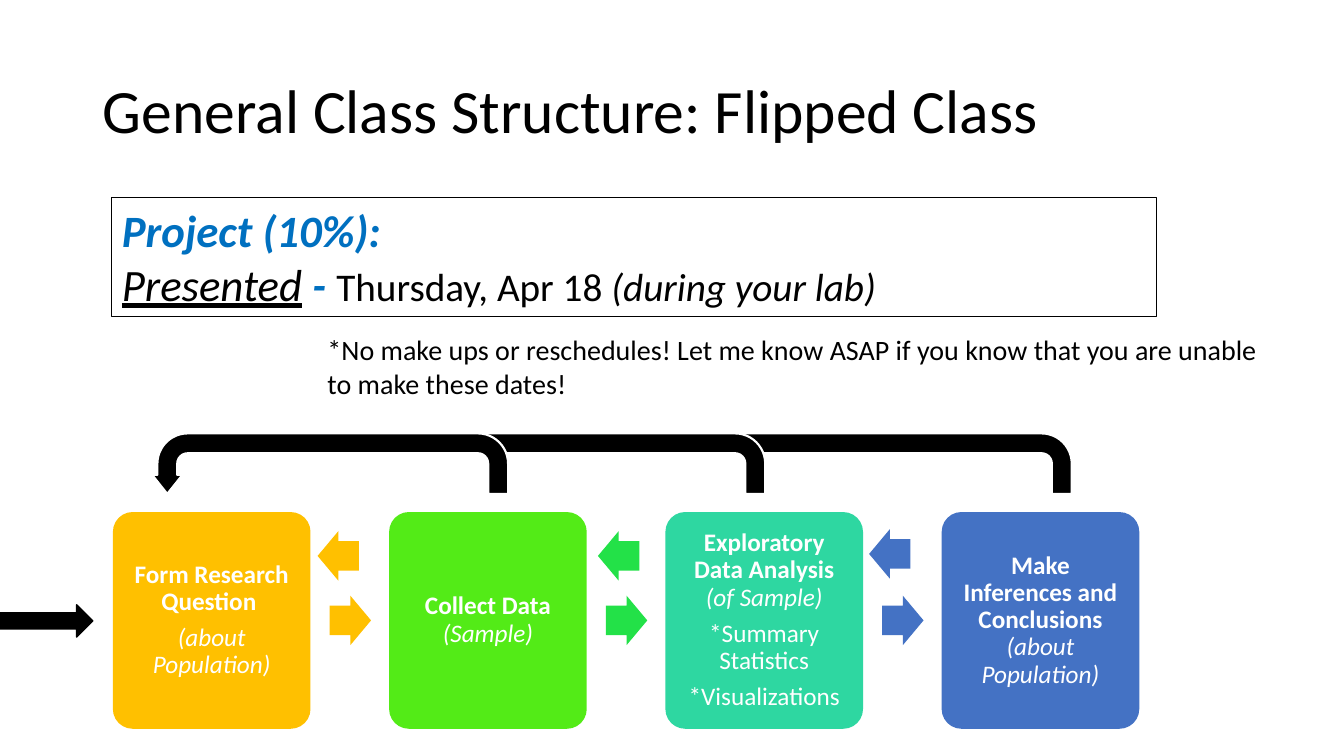
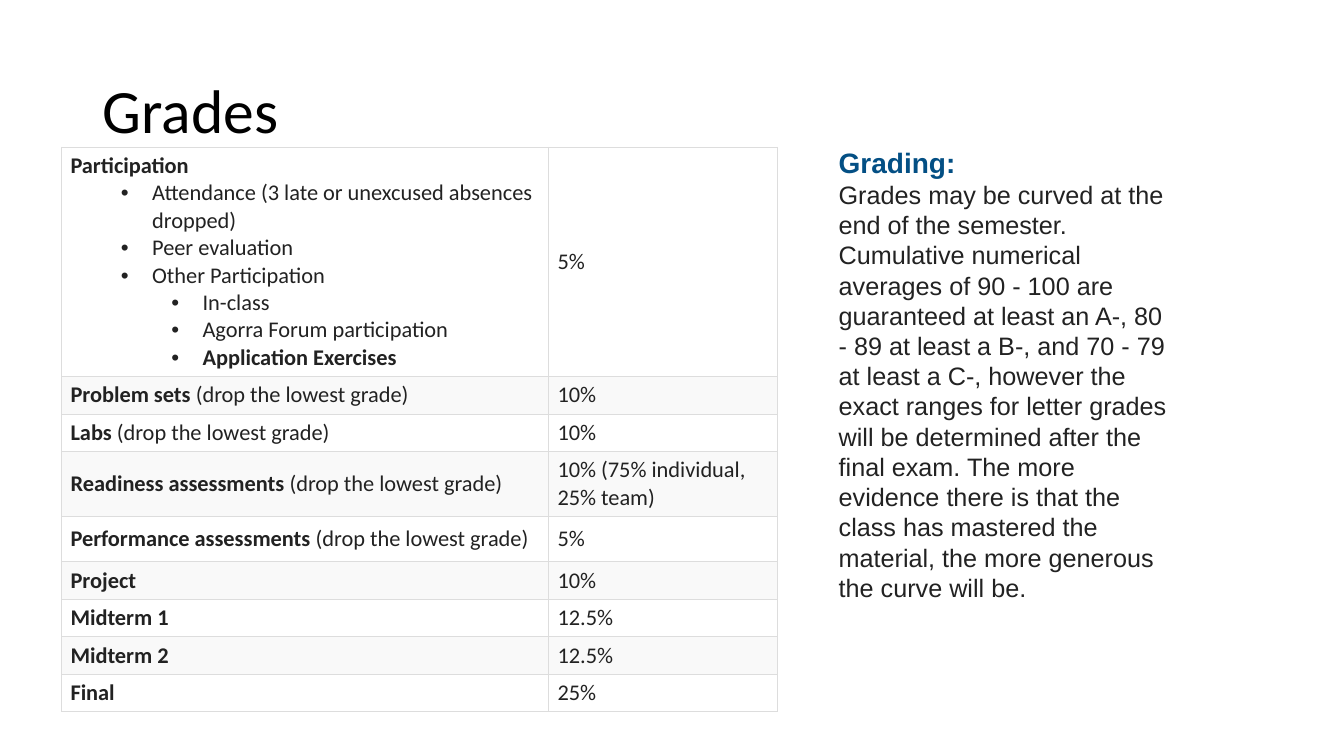
from dataclasses import dataclass

from lxml.etree import SubElement
from pptx import Presentation
from pptx.dml.color import RGBColor
from pptx.enum.shapes import MSO_SHAPE
from pptx.enum.text import MSO_ANCHOR, MSO_AUTO_SIZE, PP_ALIGN
from pptx.oxml import parse_xml
from pptx.oxml.ns import nsdecls, qn
from pptx.util import Inches, Pt


@dataclass(frozen=True)
class Theme:
    """Colours, fonts and type sizes shared by the slides."""
    font: str = "Calibri"
    alt_font: str = "Arial"
    black: str = "000000"
    white: str = "FFFFFF"
    blue: str = "0070C0"
    navy: str = "034F84"
    ink: str = "222222"
    band: str = "F9F9F9"
    grid: str = "DDDDDD"
    title: int = 44
    lead: int = 32
    detail: int = 28
    note: int = 20
    body: int = 18
    cell: int = 16


T = Theme()
BOLD = {"bold": True}
ITALIC = {"italic": True}

PROJECT = [
    [("Project (10%):", {"bold": True, "italic": True, "color": T.blue})],
    [("Presented", {"italic": True, "underline": True}),
     (" - ", {"bold": True, "italic": True, "color": T.blue}),
     ("Thursday, Apr 18 ", {"size": T.detail}),
     ("(during your lab)", {"size": T.detail, "italic": True})],
]
NOTE = ("*No make ups or reschedules! Let me know ASAP if you know that "
        "you are unable to make these dates!")
STAGES = [
    ("FFC000", [[("Form Research Question ", BOLD)], [("(about Population)", ITALIC)]]),
    ("53EB17", [[("Collect Data ", BOLD), ("(Sample)", ITALIC)]]),
    ("2ED7A1", [[("Exploratory Data Analysis ", BOLD), ("(of Sample)", ITALIC)],
                "*Summary Statistics", "*Visualizations"]),
    ("4472C4", [[("Make Inferences and Conclusions ", BOLD),
                 ("(about Population)", ITALIC)]]),
]
LINKS = [("FFC000", 3.15, 5.27), ("23E148", 5.93, 5.27), ("4472C4", 8.62, 5.25)]
LOOP_WIDTHS = [9.12, 6.08, 3.53]

DROP = "(drop the lowest grade)"
PARTICIPATION = [
    (0, "Participation", True),
    (1, "Attendance (3 late or unexcused absences dropped)", False),
    (1, "Peer evaluation", False),
    (1, "Other Participation", False),
    (2, "In-class", False),
    (2, "Agorra Forum participation", False),
    (2, "Application Exercises", True),
]
GRADES = [
    ("Participation", "", "5%", 2.27),
    ("Problem sets ", DROP, "10%", 0.37),
    ("Labs ", DROP, "10%", 0.37),
    ("Readiness assessments ", DROP, "10% (75% individual, 25% team)", 0.64),
    ("Performance assessments ", DROP, "5%", 0.45),
    ("Project", "", "10%", 0.37),
    ("Midterm 1", "", "12.5%", 0.37),
    ("Midterm 2", "", "12.5%", 0.37),
    ("Final", "", "25%", 0.37),
]
GRADING = [
    [("Grading:", {"bold": True, "size": T.note, "color": T.navy})],
    "Grades may be curved at the end of the semester. Cumulative numerical "
    "averages of 90 - 100 are guaranteed at least an A-, 80 - 89 at least a B-, "
    "and 70 - 79 at least a C-, however the exact ranges for letter grades will "
    "be determined after the final exam. The more evidence there is that the "
    "class has mastered the material, the more generous the curve will be.",
]


def rgb(color):
    """Turn a hex string into a colour."""
    return RGBColor.from_string(color)


def box(x, y, w, h):
    """Convert a position and size in inches to lengths."""
    return Inches(x), Inches(y), Inches(w), Inches(h)


def write(tf, paragraphs, size=T.body, color=T.black, font=T.font, align=PP_ALIGN.LEFT,
          anchor=MSO_ANCHOR.TOP, spacing=None, after=0, inset=None):
    """Fill a text frame with paragraphs given as strings or lists of runs."""
    tf.word_wrap = True
    tf.auto_size = MSO_AUTO_SIZE.NONE
    tf.vertical_anchor = anchor
    if inset is not None:
        tf.margin_left = tf.margin_right = tf.margin_top = tf.margin_bottom = Inches(inset)
    for i, runs in enumerate(paragraphs):
        p = tf.paragraphs[0] if i == 0 else tf.add_paragraph()
        p.alignment, p.line_spacing, p.space_after = align, spacing, Pt(after)
        for text, fmt in [(runs, {})] if isinstance(runs, str) else runs:
            r = p.add_run()
            r.text = text
            f = r.font
            f.name = font
            f.size = Pt(fmt.get("size", size))
            f.color.rgb = rgb(fmt.get("color", color))
            f.bold = fmt.get("bold", False)
            f.italic = fmt.get("italic", False)
            f.underline = fmt.get("underline", False)


def add_shape(s, kind, at, fill=None, line=None, width=0.75, adj=(), rotation=0, flip=False):
    """Add a preset shape with flat formatting."""
    sp = s.shapes.add_shape(kind, *box(*at))
    sp.shadow.inherit = False
    sp.rotation = rotation
    if fill:
        sp.fill.solid()
        sp.fill.fore_color.rgb = rgb(fill)
    else:
        sp.fill.background()
    if line:
        sp.line.color.rgb = rgb(line)
        sp.line.width = Pt(width)
    else:
        sp.line.fill.background()
    for i, value in enumerate(adj):
        sp.adjustments[i] = value
    if flip:
        sp._element.spPr.find(qn("a:xfrm")).set("flipH", "1")
    return sp


def add_slide(prs, title):
    """Add a title-only slide with the shared title style."""
    s = prs.slides.add_slide(prs.slide_layouts[5])
    sp = s.shapes.title
    sp.left, sp.top, sp.width, sp.height = box(0.92, 0.4, 11.5, 1.45)
    write(sp.text_frame, [title], size=T.title, anchor=MSO_ANCHOR.MIDDLE, spacing=0.9)
    return s


def add_bullet(p, level):
    """Give a paragraph a hanging bullet at its level."""
    p.level = level
    pPr = p._p.get_or_add_pPr()
    pPr.set("marL", str(Inches(0.31 + 0.5 * level)))
    pPr.set("indent", str(Inches(-0.31)))
    SubElement(pPr, qn("a:buFont")).set("typeface", T.alt_font)
    SubElement(pPr, qn("a:buChar")).set("char", "•")


def style_cell(cell, fill):
    """Set a cell's fill, margins and thin borders."""
    cell.fill.solid()
    cell.fill.fore_color.rgb = rgb(fill)
    cell.vertical_anchor = MSO_ANCHOR.MIDDLE
    cell.margin_left = cell.margin_right = Inches(0.09)
    cell.margin_top = cell.margin_bottom = Inches(0.05)
    tcPr = cell._tc.get_or_add_tcPr()
    for i, side in enumerate("LRTB"):
        tcPr.insert(i, parse_xml(
            f'<a:ln{side} {nsdecls("a")} w="{Pt(0.5)}"><a:solidFill>'
            f'<a:srgbClr val="{T.grid}"/></a:solidFill></a:ln{side}>'))


def build_structure(prs):
    """Build the class structure slide with its process diagram."""
    s = add_slide(prs, "General Class Structure: Flipped Class")
    sp = add_shape(s, MSO_SHAPE.RECTANGLE, (1.11, 1.96, 10.36, 1.18), line=T.black)
    write(sp.text_frame, PROJECT, size=T.lead)
    sp = s.shapes.add_textbox(*box(3.15, 3.25, 9.54, 1.11))
    write(sp.text_frame, [NOTE], size=T.note)

    for width in LOOP_WIDTHS:
        add_shape(s, MSO_SHAPE.U_TURN_ARROW, (1.51, 4.3, width, 0.6), T.black, T.white, 1.5,
                  adj=(0.328, 0.25, 0.313, 0.5, 1), flip=True)
    left, pitch = 1.12, 2.74
    for i, (color, text) in enumerate(STAGES):
        sp = add_shape(s, MSO_SHAPE.ROUNDED_RECTANGLE,
                       (left + i * pitch, 5.08, 1.96, 2.15), color, adj=(0.1,))
        write(sp.text_frame, text, color=T.white, align=PP_ALIGN.CENTER,
              anchor=MSO_ANCHOR.MIDDLE, spacing=0.9, after=6.3, inset=0.07)
    for i, (color, x, y) in enumerate(LINKS):
        for ax, ay, turn in ((3.27 + i * pitch, 5.91, 0), (x, y, 180)):
            add_shape(s, MSO_SHAPE.RIGHT_ARROW, (ax, ay, 0.41, 0.49), color,
                      adj=(0.6, 0.5), rotation=turn)
    add_shape(s, MSO_SHAPE.RIGHT_ARROW, (0, 6, 0.92, 0.32), T.black, T.black, 1)


def build_grades(prs):
    """Build the grades slide with its weight table and grading note."""
    s = add_slide(prs, "Grades")
    height = sum(row[-1] for row in GRADES)
    table = s.shapes.add_table(len(GRADES), 2, *box(0.61, 1.46, 7.1, height)).table
    table.first_row = table.horz_banding = False
    for col, width in zip(table.columns, (4.83, 2.27)):
        col.width = Inches(width)
    for i, (name, rule, weight, row_height) in enumerate(GRADES):
        table.rows[i].height = Inches(row_height)
        label = [[(name, BOLD), (rule, {})] if rule else [(name, BOLD)]]
        if i == 0:
            label = [[(text, {"bold": bold})] for _, text, bold in PARTICIPATION]
        for j, text in enumerate((label, [weight])):
            cell = table.cell(i, j)
            write(cell.text_frame, text, size=T.cell, color=T.ink)
            style_cell(cell, T.band if i % 2 else T.white)
    for p, (level, _, _) in zip(table.cell(0, 0).text_frame.paragraphs, PARTICIPATION):
        if level:
            add_bullet(p, level)

    sp = add_shape(s, MSO_SHAPE.RECTANGLE, (8.22, 1.37, 3.54, 4.68), T.white)
    write(sp.text_frame, GRADING, color=T.ink, font=T.alt_font, anchor=MSO_ANCHOR.MIDDLE)


def main():
    """Build and save the presentation."""
    prs = Presentation()
    prs.slide_width, prs.slide_height = Inches(13.33), Inches(7.5)
    build_structure(prs)
    build_grades(prs)
    prs.save("out.pptx")


if __name__ == "__main__":
    main()
